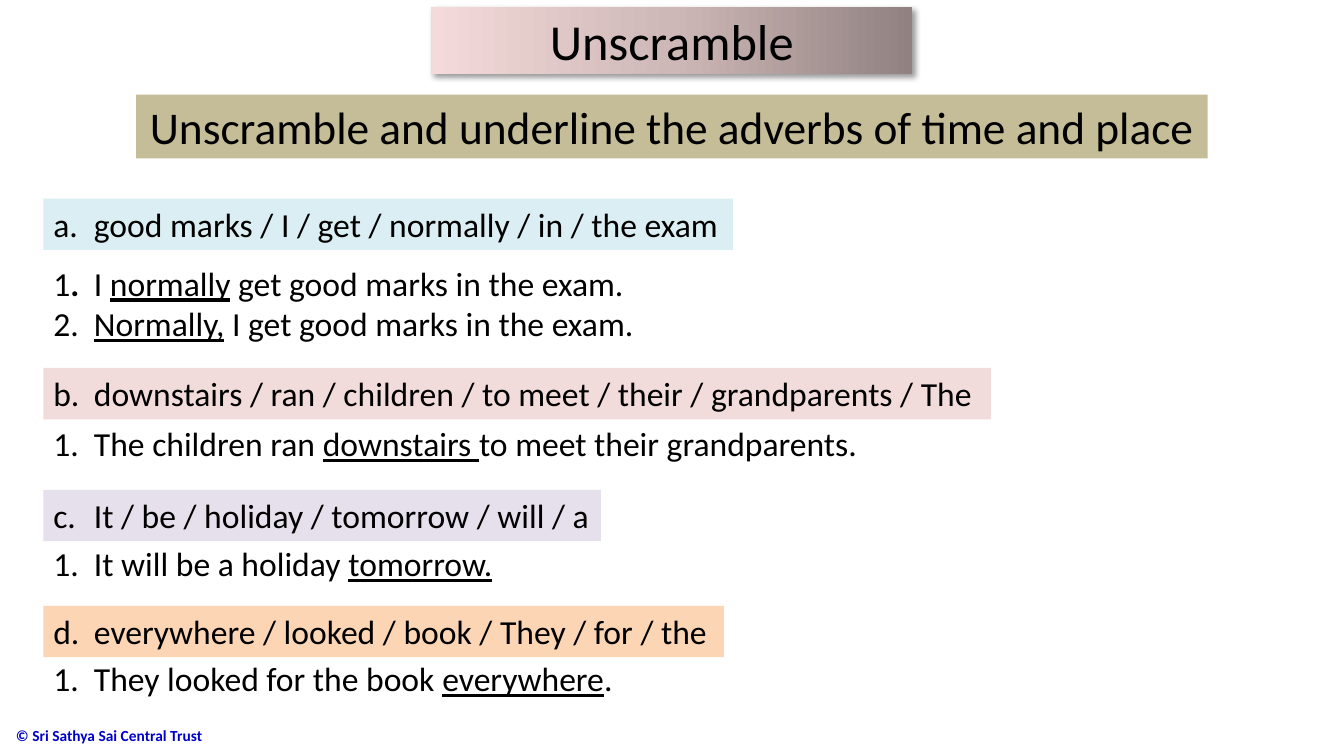
import pptx
import pptx.util
import pptx.dml.color
import pptx.enum.shapes
import pptx.enum.text
import pptx.oxml

Pt = pptx.util.Pt
MIDDLE = pptx.enum.text.MSO_ANCHOR.MIDDLE
TOP = pptx.enum.text.MSO_ANCHOR.TOP
CENTER = pptx.enum.text.PP_ALIGN.CENTER
LEFT = pptx.enum.text.PP_ALIGN.LEFT
DRAWING = 'xmlns:a="http://schemas.openxmlformats.org/drawingml/2006/main"'


def color(value):
    return pptx.dml.color.RGBColor.from_string(value)


def add_box(left, top, width, height, lines, size=24, fill=None, anchor=TOP,
            align=LEFT, text_color="000000", hanging=0):
    if fill:
        box = slide.shapes.add_shape(pptx.enum.shapes.MSO_SHAPE.RECTANGLE,
                                     Pt(left), Pt(top), Pt(width), Pt(height))
        box.fill.solid()
        box.fill.fore_color.rgb = color(fill)
        box.line.fill.background()
        box.shadow.inherit = False
    else:
        box = slide.shapes.add_textbox(Pt(left), Pt(top), Pt(width), Pt(height))
    frame = box.text_frame
    frame.word_wrap = True
    frame.vertical_anchor = anchor
    for index, line in enumerate(lines):
        paragraph = frame.add_paragraph() if index else frame.paragraphs[0]
        paragraph.alignment = align
        if hanging:
            properties = paragraph._p.get_or_add_pPr()
            properties.set("marL", str(Pt(hanging)))
            properties.set("indent", str(-Pt(hanging)))
        for text, style in line:
            run = paragraph.add_run()
            run.text = text
            run.font.name = "Calibri"
            run.font.size = Pt(size)
            run.font.color.rgb = color(text_color)
            if style == "bold":
                run.font.bold = True
            if style == "underline":
                run.font.underline = True
    return box


presentation = pptx.Presentation()
presentation.slide_width = Pt(960)
presentation.slide_height = Pt(540)
slide = presentation.slides.add_slide(presentation.slide_layouts[6])

add_box(4.3, 511, 255, 29, [[("© Sri Sathya Sai Central Trust", "bold")]],
        size=11, anchor=MIDDLE, text_color="0000CC")
add_box(97.2, 67.7, 765.4, 45.4,
        [[("Unscramble and underline the adverbs of time and place", "")]],
        size=32.4, fill="C4BD97", anchor=MIDDLE, align=CENTER)

heading = add_box(308.2, 5, 343.4, 48.2, [[("Unscramble", "")]],
                  size=36, fill="F4DADA", anchor=MIDDLE, align=CENTER)
heading.fill.gradient()
heading.fill.gradient_angle = 180
stops = heading._element.spPr.find(".//" + pptx.oxml.ns.qn("a:gsLst"))
for stop in list(stops):
    stops.remove(stop)
for position, shade in [(0, "918181"), (50, "CEB8B7"), (100, "F4DADA")]:
    stops.append(pptx.oxml.parse_xml(
        f'<a:gs {DRAWING} pos="{position * 1000}"><a:srgbClr val="{shade}"/></a:gs>'))
effects = heading._element.spPr.find(pptx.oxml.ns.qn("a:effectLst"))
effects.append(pptx.oxml.parse_xml(
    f'<a:outerShdw {DRAWING} blurRad="{Pt(4)}" dist="{Pt(3)}" dir="2700000" '
    'algn="tl" rotWithShape="0"><a:srgbClr val="000000">'
    '<a:alpha val="40000"/></a:srgbClr></a:outerShdw>'))

exercises = [
    ("a.\tgood marks / I / get / normally / in / the exam", "DBEEF4", 141.8, 492.5,
     184.3, 440, 87,
     [[("1", ""), (".\t", "bold"), ("I ", ""), ("normally", "underline"),
       (" get good marks in the exam.", "")],
      [("2.\t", ""), ("Normally,", "underline"), (" I get good marks in the exam.", "")]]),
    ("b.\tdownstairs / ran / children / to meet / their / grandparents / The",
     "F2DCDB", 262.8, 676.8, 298.8, 594, 42.5,
     [[("1.\tThe children ran ", ""), ("downstairs ", "underline"),
       ("to meet their grandparents.", "")]]),
    ("c.\tIt / be / holiday / tomorrow / will / a", "E6E0EC", 349.9, 398.2,
     384.5, 334, 28,
     [[("1.\tIt will be a holiday ", ""), ("tomorrow.", "underline")]]),
    ("d.\teverywhere / looked / book / They / for / the", "FCD5B5", 432.7, 486,
     466.6, 420, 31,
     [[("1.\tThey looked for the book ", ""), ("everywhere", "underline"), (".", "")]]),
]
for (scrambled, tint, scrambled_top, scrambled_width,
     answer_top, answer_width, answer_height, answers) in exercises:
    add_box(31, scrambled_top, scrambled_width, 36.7, [[(scrambled, "")]],
            fill=tint, hanging=29)
    add_box(31, answer_top, answer_width, answer_height, answers, hanging=29)

presentation.save("out.pptx")
